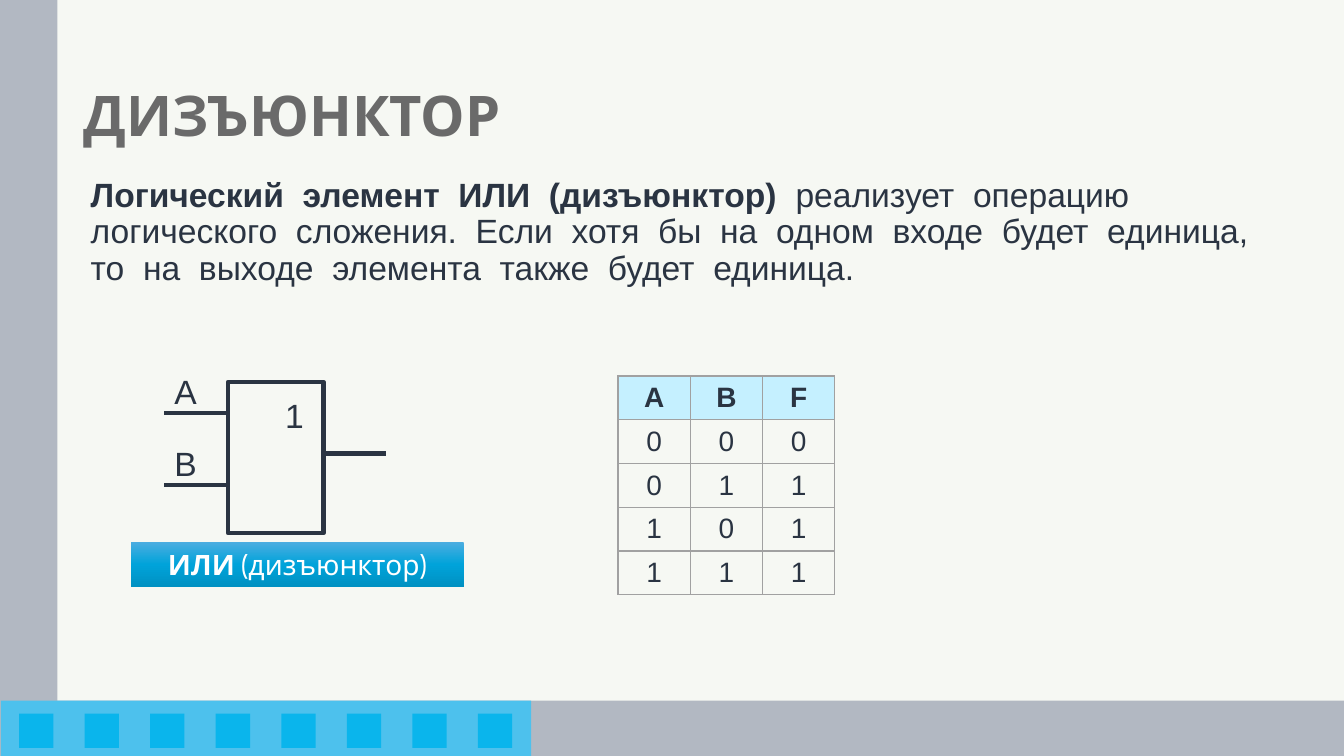
import copy
import pptx
import pptx.dml.color
import pptx.enum.shapes
import pptx.enum.text
import pptx.oxml
import pptx.oxml.ns
import pptx.util
from pptx.util import Inches

# Content: each paragraph is a list of (text, bold) runs
TITLE = [[("ДИЗЪЮНКТОР", True)]]
BODY = [
    [("Логический  элемент  ИЛИ  (дизъюнктор)  ", True), ("реализует  операцию", False)],
    [("логического  сложения.  Если  хотя  бы  на  одном  входе  будет  единица,  "
      "то  на  выходе  элемента  также  будет  единица.", False)],
]
GATE_LABEL = [[("ИЛИ", True), (" (дизъюнктор)", False)]]
GATE_MARKS = [("1", 2.73, 3.87), ("А", 1.63, 3.63), ("В", 1.63, 4.34)]
GATE_WIRES = [(1.63, 4.1), (1.63, 4.81), (3.2, 4.5)]
WIRE_LENGTH = 0.63
TRUTH_TABLE = ["АBF", "000", "011", "101", "111"]


class Theme:
    background = "F6F8F3"
    bar = "B2B8C2"
    strip = "4DC1ED"
    square = "0AB5EC"
    title = "6A6A6A"
    ink = "2A3442"
    white = "FFFFFF"
    header = "C5F0FF"
    border = "A1A1A1"
    label_gradient = ["4BADE0", "00A3DA", "0091C2"]
    heading_font, text_font = "Cabin", "Arial"
    title_size, text_size, small_size = 40, 24, 20
    gate_line, table_line = 3, 1


ALIGN = pptx.enum.text.PP_ALIGN
ANCHOR = pptx.enum.text.MSO_ANCHOR


def rgb(code):
    return pptx.dml.color.RGBColor.from_string(code)


def write(frame, paragraphs, size=Theme.text_size, font=Theme.text_font, color=Theme.ink,
          align=ALIGN.LEFT, anchor=ANCHOR.TOP, spacing=1.0, before=0):
    frame.word_wrap = True
    frame.auto_size = pptx.enum.text.MSO_AUTO_SIZE.NONE
    frame.vertical_anchor = anchor
    for index, runs in enumerate(paragraphs):
        para = frame.add_paragraph() if index else frame.paragraphs[0]
        para.alignment = align
        para.line_spacing = spacing
        para.space_before = pptx.util.Pt(before)
        for text, bold in runs:
            span = para.add_run()
            span.text = text
            span.font.size = pptx.util.Pt(size)
            span.font.name = font
            span.font.bold = bold
            span.font.color.rgb = rgb(color)


def place(shape, left, top, width, height):
    shape.left, shape.top = Inches(left), Inches(top)
    shape.width, shape.height = Inches(width), Inches(height)


def add_box(shapes, left, top, width, height, fill=None):
    box = shapes.add_shape(pptx.enum.shapes.MSO_SHAPE.RECTANGLE, Inches(left), Inches(top),
                           Inches(width), Inches(height))
    box.shadow.inherit = False
    box.line.fill.background()
    if fill:
        box.fill.solid()
        box.fill.fore_color.rgb = rgb(fill)
    else:
        box.fill.background()
    return box


def outline(shape):
    shape.line.color.rgb = rgb(Theme.ink)
    shape.line.width = pptx.util.Pt(Theme.gate_line)


def add_wire(shapes, left, top):
    wire = shapes.add_connector(pptx.enum.shapes.MSO_CONNECTOR.STRAIGHT, Inches(left),
                                Inches(top), Inches(left + WIRE_LENGTH), Inches(top))
    outline(wire)
    properties = wire.element.spPr
    properties.append(properties.makeelement(pptx.oxml.ns.qn("a:effectLst"), {}))


def fill_gradient(box, colors):
    box.fill.gradient()
    box.fill.gradient_angle = 270
    stop_list = box.element.spPr.find(".//" + pptx.oxml.ns.qn("a:gsLst"))
    stop_list.insert(1, copy.deepcopy(stop_list[0]))
    for index, (stop, color) in enumerate(zip(box.fill.gradient_stops, colors)):
        stop.position = index / (len(colors) - 1)
        stop.color.rgb = rgb(color)


def add_borders(cell):
    properties = cell._tc.get_or_add_tcPr()
    for index, side in enumerate(["lnL", "lnR", "lnT", "lnB"]):
        properties.insert(index, pptx.oxml.parse_xml(
            f'<a:{side} {pptx.oxml.ns.nsdecls("a")} w="{pptx.util.Pt(Theme.table_line)}">'
            f'<a:solidFill><a:srgbClr val="{Theme.border}"/></a:solidFill></a:{side}>'))


def add_frame(page):
    add_box(page.shapes, 0, 0, 0.57, 7.5, Theme.bar)
    add_box(page.shapes, 0, 6.95, 13.33, 0.55, Theme.bar)
    strip = page.shapes.add_group_shape().shapes
    add_box(strip, 0.01, 6.95, 5.26, 0.55, Theme.strip)
    for index in range(8):
        add_box(strip, 0.19 + 0.65 * index, 7.08, 0.34, 0.34, Theme.square)


def add_text(page):
    title, body = page.shapes.title, page.placeholders[1]
    place(title, 0.73, 0.45, 11.88, 1.45)
    write(title.text_frame, TITLE, size=Theme.title_size, font=Theme.heading_font,
          color=Theme.title, align=ALIGN.JUSTIFY, anchor=ANCHOR.MIDDLE, spacing=0.9)
    place(body, 0.8, 1.72, 11.88, 1.44)
    write(body.text_frame, BODY, spacing=0.9)
    for para in body.text_frame.paragraphs:
        properties = para._p.get_or_add_pPr()
        properties.set("marL", "0")
        properties.set("indent", "0")
        properties.append(properties.makeelement(pptx.oxml.ns.qn("a:buNone"), {}))


def add_gate(page):
    gate = page.shapes.add_group_shape().shapes
    outline(add_box(gate, 2.26, 3.79, 0.95, 1.5))
    for left, top in GATE_WIRES:
        add_wire(gate, left, top)
    for mark, left, top in GATE_MARKS:
        box = gate.add_textbox(Inches(left), Inches(top), Inches(0.39), Inches(0.5))
        write(box.text_frame, [[(mark, False)]], before=3)
    label = add_box(gate, 1.3, 5.38, 3.3, 0.44)
    fill_gradient(label, Theme.label_gradient)
    write(label.text_frame, GATE_LABEL, size=Theme.small_size, font=Theme.heading_font,
          color=Theme.white, align=ALIGN.CENTER, anchor=ANCHOR.MIDDLE)


def add_truth_table(page):
    rows, columns = len(TRUTH_TABLE), len(TRUTH_TABLE[0])
    table = page.shapes.add_table(rows, columns, Inches(6.13), Inches(3.73),
                                  Inches(2.15), Inches(2.17)).table
    table.first_row = table.horz_banding = False
    for row, values in enumerate(TRUTH_TABLE):
        for column, value in enumerate(values):
            cell = table.cell(row, column)
            write(cell.text_frame, [[(value, row == 0)]], size=Theme.small_size,
                  align=ALIGN.CENTER)
            cell.vertical_anchor = ANCHOR.MIDDLE
            if row == 0:
                cell.fill.solid()
                cell.fill.fore_color.rgb = rgb(Theme.header)
            else:
                cell.fill.background()
            add_borders(cell)


def main():
    deck = pptx.Presentation()
    deck.slide_width, deck.slide_height = Inches(13.33), Inches(7.5)
    page = deck.slides.add_slide(deck.slide_layouts[1])
    page.background.fill.solid()
    page.background.fill.fore_color.rgb = rgb(Theme.background)
    add_frame(page)
    add_text(page)
    add_gate(page)
    add_truth_table(page)
    deck.save("out.pptx")


if __name__ == "__main__":
    main()
